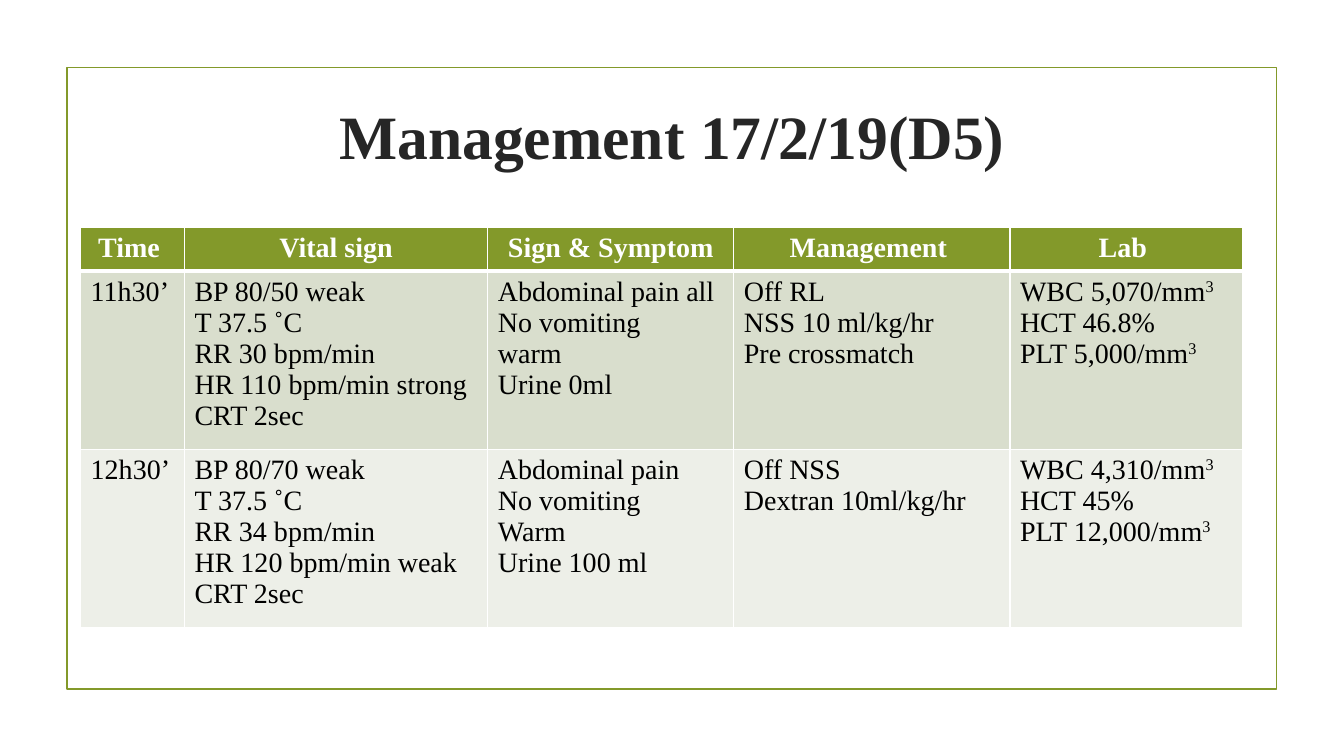
from lxml.etree import SubElement
from pptx import Presentation
from pptx.dml.color import RGBColor
from pptx.enum.shapes import MSO_SHAPE as Preset
from pptx.enum.text import MSO_ANCHOR as Anchor, PP_ALIGN as Align
from pptx.oxml.ns import qn
from pptx.util import Pt

GREEN, WHITE = "83992A", "FFFFFF"
HEADINGS = ["Time ", "Vital sign", "Sign & Symptom", "Management ", "Lab "]
OBSERVATIONS = [
    [
        ["11h30’"],
        ["BP 80/50 weak", "T 37.5 ˚C", "RR 30 bpm/min", "HR 110 bpm/min strong", "CRT 2sec"],
        ["Abdominal pain all", "No vomiting", "warm", "Urine 0ml"],
        ["Off RL", "NSS 10 ml/kg/hr", "Pre crossmatch"],
        ["WBC 5,070/mm^3", "HCT 46.8%", "PLT 5,000/mm^3"],
    ],
    [
        ["12h30’"],
        ["BP 80/70 weak", "T 37.5 ˚C", "RR 34 bpm/min", "HR 120 bpm/min weak", "CRT 2sec"],
        ["Abdominal pain", "No vomiting", "Warm", "Urine 100 ml"],
        ["Off NSS", "Dextran 10ml/kg/hr"],
        ["WBC 4,310/mm^3", "HCT 45%", "PLT 12,000/mm^3"],
    ],
]
COLUMN_WIDTHS = [74.16, 216.72, 175.68, 197.28, 166.32]
ROW_HEIGHTS = [29.5, 118.2, 118.2]
TITLE_FORMAT = {"name": "Times New Roman", "size": Pt(44), "bold": True}
HEADING_FORMAT = {**TITLE_FORMAT, "size": Pt(20)}
BODY_FORMAT = {**HEADING_FORMAT, "bold": False}


def rgb(value):
    """Turn a hex string into a colour."""
    return RGBColor.from_string(value)


def write_lines(frame, lines, formats, color, align):
    """Write one paragraph per line, raising whatever follows a caret."""
    for index, line in enumerate(lines):
        paragraph = frame.paragraphs[0] if index == 0 else frame.add_paragraph()
        paragraph.alignment = align
        for level, text in enumerate(line.split("^")):
            run = paragraph.add_run()
            run.text = text
            for name, value in formats.items():
                setattr(run.font, name, value)
            run.font.color.rgb = rgb(color)
            if level:
                run.font._element.set("baseline", "30000")


def add_frame(slide, left, top, width, height):
    """Draw the thin green frame around the content."""
    frame = slide.shapes.add_shape(Preset.RECTANGLE, Pt(left), Pt(top), Pt(width), Pt(height))
    frame.shadow.inherit = False
    frame.fill.background()
    frame.line.color.rgb = rgb(GREEN)
    frame.line.width = Pt(1.25)


def add_title(slide, left, top, width, height):
    """Place the centred title."""
    title = slide.shapes.add_textbox(Pt(left), Pt(top), Pt(width), Pt(height)).text_frame
    title.word_wrap = True
    title.vertical_anchor = Anchor.MIDDLE
    write_lines(title, ["Management 17/2/19(D5)"], TITLE_FORMAT, "262626", Align.CENTER)


def style_cell(cell, fill, bottom):
    """Give a cell white borders and a plain fill."""
    properties = cell._tc.get_or_add_tcPr()
    for side, width in {"lnL": 1, "lnR": 1, "lnT": 1, "lnB": bottom}.items():
        border = SubElement(properties, qn(f"a:{side}"), w=str(Pt(width)))
        SubElement(SubElement(border, qn("a:solidFill")), qn("a:srgbClr"), val=WHITE)
    cell.fill.solid()
    cell.fill.fore_color.rgb = rgb(fill)


def add_observations(slide, left, top, width, height):
    """Build the table of observations by time."""
    rows = [[[heading] for heading in HEADINGS], *OBSERVATIONS]
    table = slide.shapes.add_table(
        len(rows), len(HEADINGS), Pt(left), Pt(top), Pt(width), Pt(height)
    ).table
    for column, column_width in zip(table.columns, COLUMN_WIDTHS):
        column.width = Pt(column_width)
    for row, row_height in zip(table.rows, ROW_HEIGHTS):
        row.height = Pt(row_height)
    styles = [
        (GREEN, 3, HEADING_FORMAT, WHITE, Align.CENTER),
        ("D9DECD", 1, BODY_FORMAT, "000000", Align.LEFT),
        ("EDEFE8", 1, BODY_FORMAT, "000000", Align.LEFT),
    ]
    for row, entries, (fill, bottom, formats, color, align) in zip(table.rows, rows, styles):
        for cell, lines in zip(row.cells, entries):
            style_cell(cell, fill, bottom)
            write_lines(cell.text_frame, lines, formats, color, align)


def main():
    """Build and save the slide."""
    deck = Presentation()
    deck.slide_width, deck.slide_height = Pt(960), Pt(540)
    slide = deck.slides.add_slide(deck.slide_layouts[6])
    add_frame(slide, 47.8, 48.2, 864, 444)
    add_title(slide, 102.2, 44.6, 756, 103)
    add_observations(slide, 57.6, 162.3, sum(COLUMN_WIDTHS), sum(ROW_HEIGHTS))
    deck.save("out.pptx")


if __name__ == "__main__":
    main()
